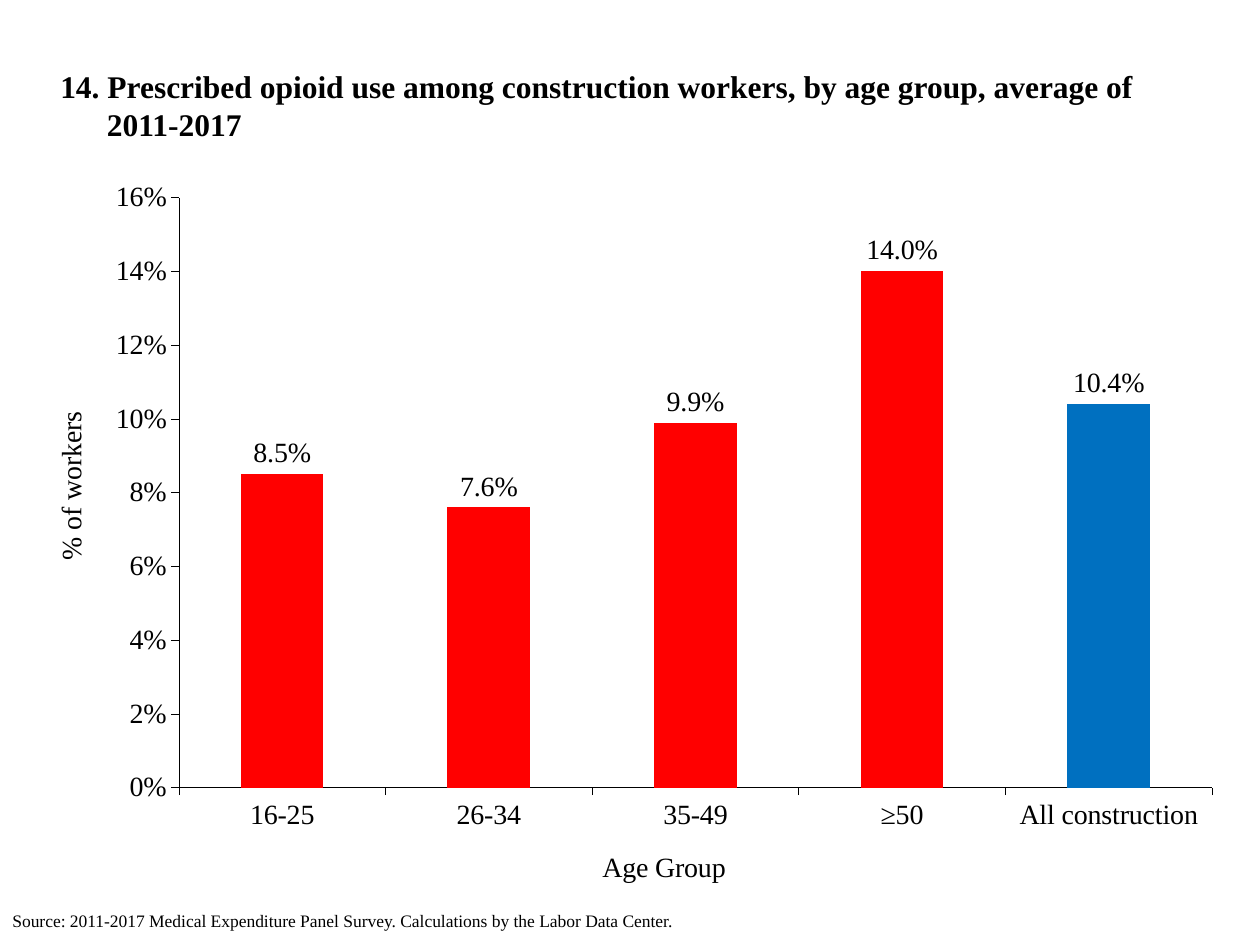
from dataclasses import dataclass

from pptx import Presentation
from pptx.chart.data import CategoryChartData
from pptx.dml.color import RGBColor
from pptx.enum.chart import XL_CHART_TYPE as ChartType
from pptx.enum.chart import XL_LABEL_POSITION as LabelPosition
from pptx.enum.chart import XL_TICK_MARK as TickMark
from pptx.enum.text import MSO_ANCHOR as Anchor
from pptx.oxml import parse_xml
from pptx.oxml.ns import nsdecls, qn
from pptx.util import Inches, Pt

FONT = "Times New Roman"
BLACK, RED, BLUE = "000000", "FF0000", "0070C0"
CHART_WIDTH, CHART_HEIGHT = Inches(9.25), Inches(5.66)


@dataclass(frozen=True)
class Bar:
    age_group: str
    share: float
    color: str = RED


@dataclass(frozen=True)
class TextBlock:
    text: str
    left: float
    top: float
    width: float
    height: float
    size: int
    bold: bool = False
    hanging: float = 0


BARS = [
    Bar("16-25", 0.085),
    Bar("26-34", 0.076),
    Bar("35-49", 0.099),
    Bar("≥50", 0.14),
    Bar("All construction", 0.104, BLUE),
]
TITLE = TextBlock(
    "14. Prescribed opioid use among construction workers, by age group, average of\v2011-2017",
    0.38, 0.33, 9.25, 1, 18, True, 0.37,
)
SOURCE = TextBlock(
    "Source: 2011-2017 Medical Expenditure Panel Survey. Calculations by the Labor Data Center.",
    0, 7.17, 10, 0.27, 10,
)


def rgb(color: str) -> RGBColor:
    return RGBColor.from_string(color)


def style_font(font, size: float, bold: bool = False) -> None:
    font.name = FONT
    font.size = Pt(size)
    font.bold = bold
    font.color.rgb = rgb(BLACK)


def add_text(slide, block: TextBlock) -> None:
    shape = slide.shapes.add_textbox(
        Inches(block.left), Inches(block.top), Inches(block.width), Inches(block.height)
    )
    frame = shape.text_frame
    frame.word_wrap = True
    frame.vertical_anchor = Anchor.MIDDLE
    frame.text = block.text
    paragraph = frame.paragraphs[0]
    for run in paragraph.runs:
        style_font(run.font, block.size, block.bold)
    if block.hanging:
        properties = paragraph._p.get_or_add_pPr()
        properties.set("marL", str(Inches(block.hanging)))
        properties.set("indent", str(-Inches(block.hanging)))


def set_layout(element, index: int, target: str = "", **lengths: int) -> None:
    for layout in element.findall(qn("c:layout")):
        element.remove(layout)
    parts = f'<c:layoutTarget val="{target}"/>' if target else ""
    parts += '<c:xMode val="edge"/><c:yMode val="edge"/>'
    for name, length in lengths.items():
        whole = CHART_WIDTH if name in "xw" else CHART_HEIGHT
        parts += f'<c:{name} val="{length / whole:.4f}"/>'
    element.insert(index, parse_xml(
        f'<c:layout {nsdecls("c")}><c:manualLayout>{parts}</c:manualLayout></c:layout>'
    ))


def style_axis(axis, title: str, left: float, top: float) -> None:
    axis.has_major_gridlines = False
    axis.major_tick_mark = TickMark.OUTSIDE
    axis.minor_tick_mark = TickMark.NONE
    axis.format.line.color.rgb = rgb(BLACK)
    axis.format.line.width = Pt(0.25)
    style_font(axis.tick_labels.font, 16)
    frame = axis.axis_title.text_frame
    frame.text = title
    style_font(frame.paragraphs[0].runs[0].font, 16)
    set_layout(axis.axis_title._element, 1, x=Inches(left), y=Inches(top))


def add_opioid_chart(slide, bars: list[Bar]) -> None:
    data = CategoryChartData(number_format="0.0%")
    data.categories = [bar.age_group for bar in bars]
    data.add_series("Series 1", [bar.share for bar in bars])
    chart = slide.shapes.add_chart(
        ChartType.COLUMN_CLUSTERED, Inches(0.38), Inches(1.42), CHART_WIDTH, CHART_HEIGHT, data
    ).chart
    chart.has_legend = False
    chart.has_title = False
    style_font(chart.font, 16)
    style_axis(chart.category_axis, "Age Group", 4.36, 5.32)
    value_axis = chart.value_axis
    style_axis(value_axis, "% of workers", 0, 1.83)
    value_axis.minimum_scale, value_axis.maximum_scale = 0, 0.16
    value_axis.major_unit = 0.02
    value_axis.tick_labels.number_format = "0%"
    value_axis.tick_labels.number_format_is_linked = False

    plot = chart.plots[0]
    plot.gap_width = 150
    plot.vary_by_categories = False
    plot.has_data_labels = True
    labels = plot.data_labels
    labels.show_value = True
    labels.number_format = "0.0%"
    labels.number_format_is_linked = False
    labels.position = LabelPosition.OUTSIDE_END
    style_font(labels.font, 16)
    series = plot.series[0]
    series.format.fill.solid()
    series.format.fill.fore_color.rgb = rgb(RED)
    for index, bar in enumerate(bars):
        if bar.color != RED:
            fill = series.points[index].format.fill
            fill.solid()
            fill.fore_color.rgb = rgb(bar.color)
    plot_area = chart._chartSpace.chart.plotArea
    set_layout(
        plot_area, 0, "inner", x=Inches(1.04), y=Inches(0.15), w=Inches(8.2), h=Inches(4.72)
    )


def main() -> None:
    """Build the slide on prescribed opioid use by age group."""
    presentation = Presentation()
    presentation.slide_width, presentation.slide_height = Inches(10), Inches(7.5)
    slide = presentation.slides.add_slide(presentation.slide_layouts[6])
    add_text(slide, TITLE)
    add_opioid_chart(slide, BARS)
    add_text(slide, SOURCE)
    presentation.save("out.pptx")


if __name__ == "__main__":
    main()
